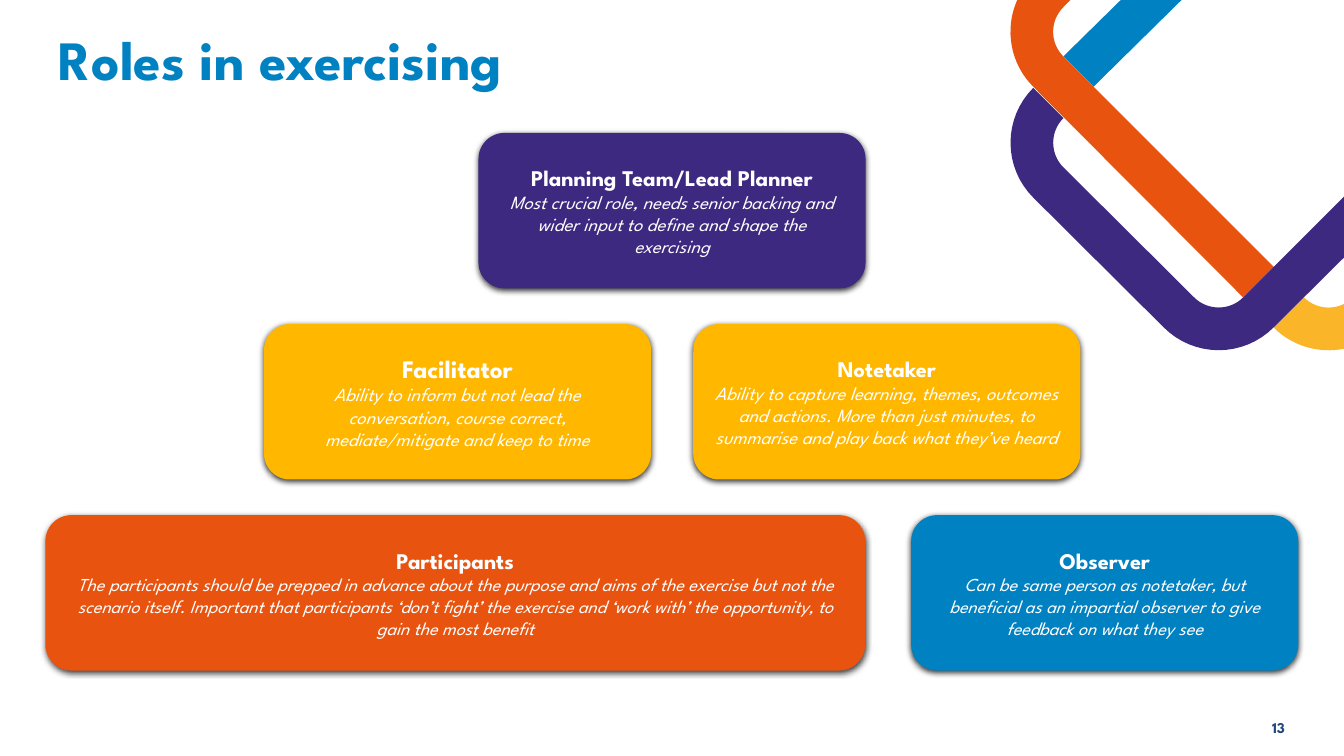
import math
import lxml.etree
import pptx
import pptx.util
import pptx.dml.color
import pptx.enum.shapes
import pptx.enum.text
import pptx.oxml.ns

Pt = pptx.util.Pt
Align = pptx.enum.text.PP_ALIGN
Kind = pptx.enum.shapes.MSO_SHAPE


def tint(code):
    return pptx.dml.color.RGBColor.from_string(code)


def bend(x, y, size, start, end):
    turns = [math.radians(start + (end - start) * i / 16) for i in range(17)]
    return [(x + size * math.cos(t), y + size * math.sin(t)) for t in turns]


deck = pptx.Presentation()
deck.slide_width, deck.slide_height = Pt(960), Pt(540)
slide = deck.slides.add_slide(deck.slide_layouts[5])
shapes = slide.shapes

blue, orange, purple, yellow, white = "0082C2", "E8540F", "3D297F", "FFB700", "FFFFFF"

title = shapes.title
title.left, title.top, title.width, title.height = Pt(32.4), Pt(9.4), Pt(894), Pt(65)
number = shapes.add_textbox(Pt(870), Pt(499), Pt(57.5), Pt(41))
texts = [
    (title, Align.LEFT, [("Roles in exercising", 39.6, blue, True)]),
    (number, Align.RIGHT, [("13", 10.7, "1F497D", True)]),
]

wide, high, top, step = 276.5, 111, 95, 136.5
cards = [
    (188.6, 1, wide, yellow, "Facilitator", 18, 13.3,
     "Ability to inform but not lead the conversation, course correct, mediate/mitigate and keep to time"),
    (32.4, 2, 585.6, orange, "Participants", 16, 13,
     "The participants should be prepped in advance about the purpose and aims of the exercise but not the "
     "scenario itself. Important that participants ‘don’t fight’ the exercise and ‘work with’ the opportunity, "
     "to gain the most benefit"),
    (341.8, 0, wide, purple, "Planning Team/Lead Planner", 16, 13.3,
     "Most crucial role, needs senior backing and wider input to define and shape the exercising"),
    (495.2, 1, wide, yellow, "Notetaker", 16, 13.3,
     "Ability to capture learning, themes, outcomes and actions. More than just minutes, to summarise "
     "and play back what they’ve heard"),
    (650.9, 2, wide, blue, "Observer", 16, 13,
     "Can be same person as notetaker, but beneficial as an impartial observer to give feedback "
     "on what they see"),
]
for left, row, width, fill, role, large, small, note in cards:
    card = shapes.add_shape(Kind.ROUNDED_RECTANGLE, Pt(left), Pt(top + row * step), Pt(width), Pt(high))
    card.adjustments[0] = 0.167
    card.fill.solid()
    card.fill.fore_color.rgb = tint(fill)
    card.line.fill.background()
    card.shadow.inherit = False
    effects = card._element.spPr.find(pptx.oxml.ns.qn("a:effectLst"))
    shade = lxml.etree.SubElement(effects, pptx.oxml.ns.qn("a:outerShdw"), blurRad=str(Pt(4.5)),
                                  dist=str(Pt(1.5)), dir="5400000", rotWithShape="0")
    black = lxml.etree.SubElement(shade, pptx.oxml.ns.qn("a:srgbClr"), val="000000")
    lxml.etree.SubElement(black, pptx.oxml.ns.qn("a:alpha"), val="80000")
    texts.append((card, Align.CENTER, [(role, large, white, True), (note, small, white, False)]))

frame_style = {
    "word_wrap": True,
    "auto_size": pptx.enum.text.MSO_AUTO_SIZE.NONE,
    "vertical_anchor": pptx.enum.text.MSO_ANCHOR.MIDDLE,
    "margin_left": Pt(9.6),
    "margin_right": Pt(9.6),
    "margin_top": Pt(9.6),
    "margin_bottom": Pt(9.6),
}
for box, align, lines in texts:
    frame = box.text_frame
    for key, value in frame_style.items():
        setattr(frame, key, value)
    for i, (words, size, color, bold) in enumerate(lines):
        para = frame.add_paragraph() if i else frame.paragraphs[0]
        para.alignment = align
        run = para.add_run()
        run.text = words
        run.font.color.rgb = tint(color)
        style = {"name": "League Spartan", "size": Pt(size), "bold": bold, "italic": not bold}
        for key, value in style.items():
            setattr(run.font, key, value)

outer, inner = 55.4, 24.9
side, base = 777.2, 194.8
bands = [
    (orange, bend(side, 22.7, outer, 204.2, 135) + [(888, 212.4), (910, 190.8)]
     + bend(side, 22.7, inner, 135, 225) + [(764.7, 0)]),
    ("FAB529", bend(949, base, outer, 135, 78.5) + bend(949, base, inner, 63.8, 135)),
    (purple, bend(side, 102, outer, 225, 135) + bend(870.5, base, outer, 135, 45)
     + [(960, 184), (960, 140.5)]
     + bend(870.5, base, inner, 45, 135) + bend(side, 102, inner, 135, 225)),
    (blue, [(844, 0), (800.6, 0), (759.6, 40.3), (781.2, 61.9)]),
]
for color, points in bands:
    spots = [(Pt(x), Pt(y)) for x, y in points]
    pen = shapes.build_freeform(*spots[0], scale=1.0)
    pen.add_line_segments(spots[1:], close=True)
    band = pen.convert_to_shape()
    band.fill.solid()
    band.fill.fore_color.rgb = tint(color)
    band.line.fill.background()
    band.shadow.inherit = False

deck.save("out.pptx")
